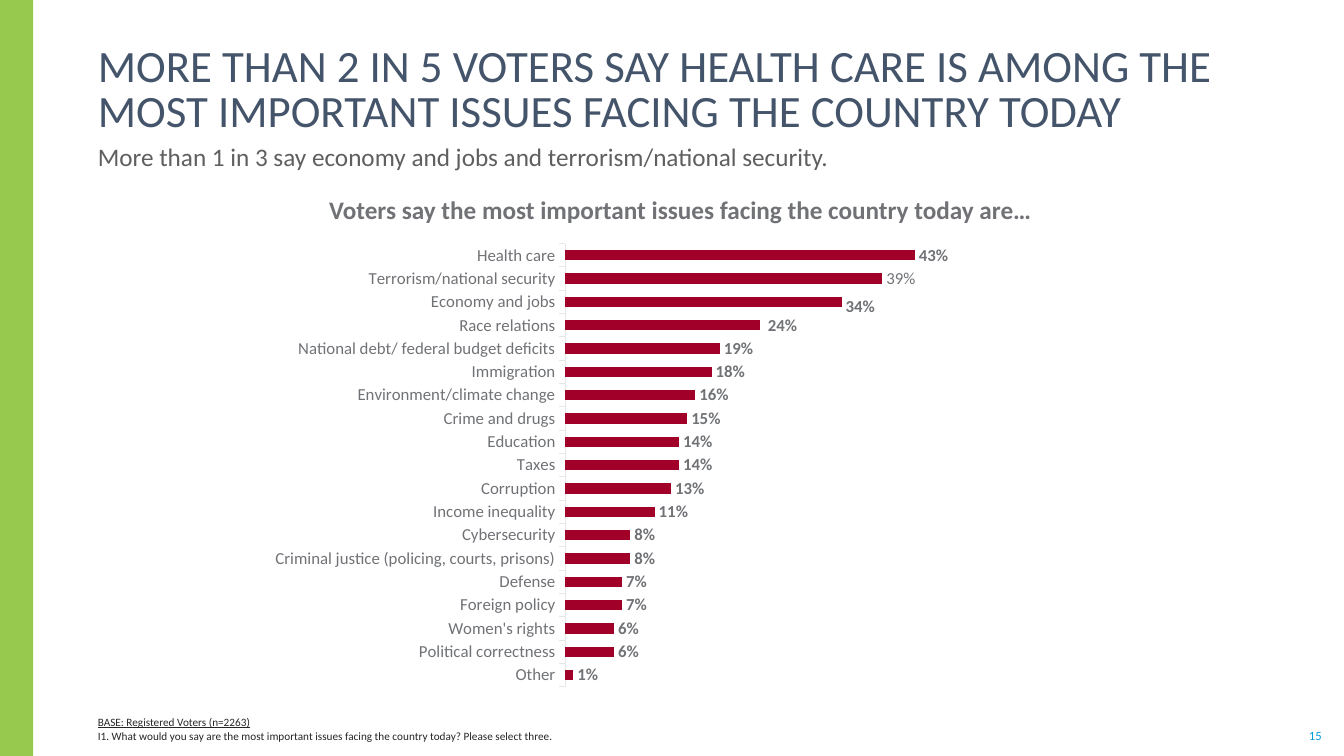
import pptx
import pptx.chart.data
import pptx.dml.color
import pptx.enum.chart
import pptx.enum.shapes
import pptx.enum.text
import pptx.oxml
import pptx.oxml.ns
import pptx.util

Inches, Pt = pptx.util.Inches, pptx.util.Pt
RGB = pptx.dml.color.RGBColor.from_string
ALIGN = pptx.enum.text.PP_ALIGN
ANCHOR = pptx.enum.text.MSO_ANCHOR
XL = pptx.enum.chart

TITLE = ("MORE THAN 2 IN 5 VOTERS SAY HEALTH CARE IS AMONG THE "
         "MOST IMPORTANT ISSUES FACING THE COUNTRY TODAY")
SUBTITLE = "More than 1 in 3 say economy and jobs and terrorism/national security."
CHART_HEADING = "Voters say the most important issues facing the country today are…"
BASE = "BASE: Registered Voters (n=2263)"
QUESTION = ("I1. What would you say are the most important issues facing "
            "the country today? Please select three.")
PAGE = "15"
ISSUES = [  # most to least mentioned
    ("Health care", 0.43),
    ("Terrorism/national security", 0.39),
    ("Economy and jobs", 0.34),
    ("Race relations", 0.24),
    ("National debt/ federal budget deficits", 0.19),
    ("Immigration", 0.18),
    ("Environment/climate change", 0.16),
    ("Crime and drugs", 0.15),
    ("Education", 0.14),
    ("Taxes", 0.14),
    ("Corruption", 0.13),
    ("Income inequality", 0.11),
    ("Cybersecurity", 0.08),
    ("Criminal justice (policing, courts, prisons)", 0.08),
    ("Defense", 0.07),
    ("Foreign policy", 0.07),
    ("Women's rights", 0.06),
    ("Political correctness", 0.06),
    ("Other", 0.01),
]
PLAIN_LABEL = "Terrorism/national security"
LABEL_SHIFTS = {"Economy and jobs": (0, 0.01), "Race relations": (0.003, 0)}
PLOT_AREA = {"x": 0.287, "y": 0.067, "w": 0.706, "h": 0.901}

THEME = {
    "font": "Calibri",
    "band": "96C94D",
    "bar": "A10028",
    "axis": "E7E7E7",
    "title": {"size": 32, "color": "44546A"},
    "subtitle": {"size": 18, "color": "5F5F5F"},
    "heading": {"size": 18, "color": "707276", "bold": True},
    "base": {"size": 8, "color": "262626", "underline": True},
    "question": {"size": 8, "color": "262626"},
    "page": {"size": 9, "color": "009DD9"},
    "category": {"size": 12, "color": "707276", "bold": False},
    "value": {"size": 12, "color": "707276", "bold": True},
}


def set_font(font, style):
    font.name = THEME["font"]
    for key, value in THEME[style].items():
        if key == "color":
            font.color.rgb = RGB(value)
        else:
            setattr(font, key, Pt(value) if key == "size" else value)


def fill_text(sp, box, lines, frame, para):
    """Place a text shape; lines are (text, style) pairs, one a paragraph."""
    sp.left, sp.top, sp.width, sp.height = map(Inches, box)
    tf = sp.text_frame
    tf.auto_size = pptx.enum.text.MSO_AUTO_SIZE.NONE
    for key, value in frame.items():
        setattr(tf, key, value)
    for i, (text, style) in enumerate(lines):
        p = tf.paragraphs[0] if i == 0 else tf.add_paragraph()
        pPr = p._p.get_or_add_pPr()
        pPr.set("marL", "0")
        pPr.set("indent", "0")
        pPr.append(pptx.oxml.parse_xml(f"<a:buNone {pptx.oxml.ns.nsdecls('a')}/>"))
        p.space_before = Pt(0.6 if i else 0)
        for key, value in para.items():
            setattr(p, key, value)
        r = p.add_run()
        r.text = text
        set_font(r.font, style)


def manual_layout(**parts):
    items = "".join(f'<c:{k} val="{v}"/>' for k, v in parts.items())
    return pptx.oxml.parse_xml(
        f"<c:layout {pptx.oxml.ns.nsdecls('c')}>"
        f"<c:manualLayout>{items}</c:manualLayout></c:layout>")


def add_issue_chart(slide):
    bars = ISSUES[::-1]
    names = [name for name, _ in bars]
    data = pptx.chart.data.CategoryChartData(number_format="0%")
    data.categories = names
    data.add_series("Series 1", [share for _, share in bars])
    chart = slide.shapes.add_chart(
        XL.XL_CHART_TYPE.BAR_CLUSTERED, Inches(2.33), Inches(2.09),
        Inches(11.42), Inches(4.88), data).chart
    chart.has_title = chart.has_legend = False
    set_font(chart.font, "category")

    area = chart.plots[0]._element.getparent()
    for old in area.findall(pptx.oxml.ns.qn("c:layout")):
        area.remove(old)
    area.insert(0, manual_layout(
        layoutTarget="inner", xMode="edge", yMode="edge", **PLOT_AREA))

    axis = chart.category_axis
    axis.major_tick_mark = XL.XL_TICK_MARK.OUTSIDE
    axis.format.line.color.rgb = RGB(THEME["axis"])
    axis.format.line.width = Pt(0.75)
    set_font(axis.tick_labels.font, "category")
    scale = {"minimum_scale": 0, "maximum_scale": 1,
             "has_major_gridlines": False, "visible": False}
    for key, value in scale.items():
        setattr(chart.value_axis, key, value)

    plot = chart.plots[0]
    plot.gap_width = 125
    plot.vary_by_categories = False
    series = plot.series[0]
    series.format.fill.solid()
    series.format.fill.fore_color.rgb = RGB(THEME["bar"])
    labels = series.data_labels
    label_format = {"show_value": True, "number_format": "0%",
                    "number_format_is_linked": False,
                    "position": XL.XL_LABEL_POSITION.OUTSIDE_END}
    for key, value in label_format.items():
        setattr(labels, key, value)
    set_font(labels.font, "value")

    for name in (PLAIN_LABEL, *LABEL_SHIFTS):
        label = series.points[names.index(name)].data_label
        set_font(label.font, "category" if name == PLAIN_LABEL else "value")
        label.position = XL.XL_LABEL_POSITION.OUTSIDE_END
        if name in LABEL_SHIFTS:
            x, y = LABEL_SHIFTS[name]
            label._get_or_add_dLbl().insert(1, manual_layout(x=x, y=y))


def main():
    prs = pptx.Presentation()
    prs.slide_width, prs.slide_height = Inches(13.33), Inches(7.5)
    slide = prs.slides.add_slide(prs.slide_layouts.get_by_name("Two Content"))
    title, subtitle, footnote = slide.placeholders

    band = slide.shapes.add_shape(
        pptx.enum.shapes.MSO_SHAPE.RECTANGLE, 0, 0, Inches(0.33), prs.slide_height)
    band.shadow.inherit = False
    band.fill.solid()
    band.fill.fore_color.rgb = RGB(THEME["band"])
    band.line.fill.background()

    flush = {"margin_top": 0, "margin_bottom": 0, "word_wrap": True}
    low = {**flush, "vertical_anchor": ANCHOR.BOTTOM}
    left = {"alignment": ALIGN.LEFT}
    center = {"alignment": ALIGN.CENTER}
    fill_text(title, (0.87, 0.74, 11.91, 0.62), [(TITLE, "title")],
              low, {**left, "line_spacing": 0.85})
    fill_text(subtitle, (0.87, 1.4, 11.9, 0.34), [(SUBTITLE, "subtitle")],
              {**flush, "vertical_anchor": ANCHOR.TOP}, left)
    fill_text(footnote, (0.87, 6.97, 11.91, 0.4),
              [(BASE, "base"), (QUESTION, "question")], low, left)

    add_issue_chart(slide)

    heading = slide.shapes.add_textbox(0, 0, 0, 0)
    fill_text(heading, (3.08, 1.88, 7.34, 0.4), [(CHART_HEADING, "heading")],
              {"word_wrap": False}, center)
    page = slide.shapes.add_textbox(0, 0, 0, 0)
    fill_text(page, (12.97, 7.22, 0.15, 0.15), [(PAGE, "page")],
              {**flush, "margin_left": 0, "margin_right": 0, "word_wrap": False,
               "vertical_anchor": ANCHOR.MIDDLE}, center)
    prs.save("out.pptx")


if __name__ == "__main__":
    main()
